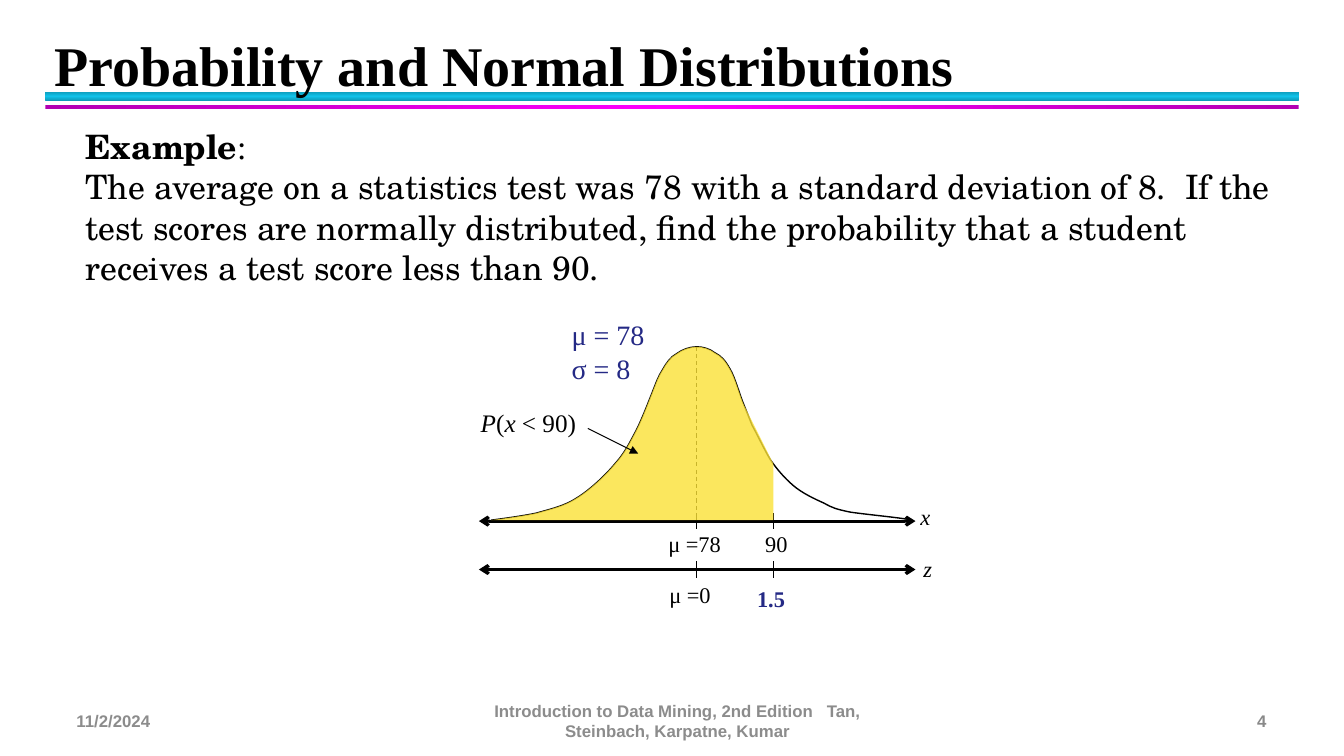
"""Build the slide on probability and normal distributions."""
from copy import deepcopy
from dataclasses import dataclass

from pptx import Presentation
from pptx import util as u
from pptx.dml.color import RGBColor
from pptx.enum import dml, shapes, text
from pptx.oxml.ns import qn
from pptx.oxml.xmlchemy import OxmlElement

PX = 9144


@dataclass(frozen=True)
class Theme:
    """Colours, fonts and type sizes of the slide."""
    black: str = "000000"
    white: str = "FFFFFF"
    navy: str = "242985"
    yellow: str = "FBE136"
    cyan: tuple = ("0E9BBA", "12C2E9", "0E9BBA")
    magenta: tuple = ("B200B2", "FF00FF", "B200B2")
    footer_grey: str = "8C8C8C"
    number_grey: str = "898989"
    serif: str = "Times New Roman"
    schoolbook: str = "TeX Gyre Schola"
    sans: str = "Arial"
    title: int = 40
    body: int = 24
    parameters: int = 20
    area: int = 18
    label: int = 16
    footer: int = 12


THEME = Theme()

BELL = [
    (-204, 1), (-196, 2), (-173, 5), (-159, 8),
    (-145, 12), (-131, 15), (-119, 23),
    (-106, 31), (-91, 45), (-81, 57),
    (-71, 68), (-66, 79), (-60, 90),
    (-54, 102), (-48, 118), (-44, 128),
    (-40, 138), (-38, 144), (-34, 150),
    (-30, 157), (-26, 163), (-20, 166),
    (-15, 170), (-7, 173), (0, 173),
    (6, 173), (13, 171), (18, 167),
    (24, 164), (28, 160), (33, 151),
    (38, 143), (43, 124), (47, 115),
    (51, 105), (51, 104), (55, 95),
    (60, 86), (67, 71), (73, 61),
    (80, 51), (87, 43), (95, 36),
    (104, 28), (117, 22), (126, 18),
    (135, 13), (138, 12), (152, 9),
    (165, 7), (196, 4), (208, 2),
]


def rgb(color):
    """Return a colour object for a hex string."""
    return RGBColor.from_string(color)


def emu(*lengths):
    """Turn px lengths into EMU."""
    return [length * PX for length in lengths]


def add_text(slide, box, lines, size, color=THEME.black, font=THEME.serif, bold=False,
             italic=False, align=text.PP_ALIGN.LEFT, anchor=text.MSO_ANCHOR.TOP, wrap=True):
    """Add a text box with one paragraph per line and return it."""
    shape = slide.shapes.add_textbox(*emu(*box))
    frame = shape.text_frame
    frame.text = "\n".join(lines)
    frame.word_wrap = wrap
    frame.vertical_anchor = anchor
    if not wrap:
        frame.auto_size = text.MSO_AUTO_SIZE.SHAPE_TO_FIT_TEXT
    for paragraph in frame.paragraphs:
        paragraph.alignment = align
        paragraph.font.name = font
        paragraph.font.size = u.Pt(size)
        paragraph.font.bold = bold
        paragraph.font.italic = italic
        paragraph.font.color.rgb = rgb(color)
    return shape


def add_line(slide, start, end, width=0.75, head=None, tail=None, dashed=False):
    """Add a straight black line with optional arrowheads."""
    connector = slide.shapes.add_connector(shapes.MSO_CONNECTOR.STRAIGHT, *emu(*start, *end))
    connector.line.color.rgb = rgb(THEME.black)
    connector.line.width = u.Pt(width)
    if dashed:
        connector.line.dash_style = dml.MSO_LINE.DASH
    for tag, kind in (("a:headEnd", head), ("a:tailEnd", tail)):
        if kind:
            arrowhead = OxmlElement(tag)
            arrowhead.set("type", kind)
            connector.get_or_add_ln().append(arrowhead)
    connector.element.spPr.append(OxmlElement("a:effectLst"))


def add_bar(slide, box, colors, angle):
    """Add a rule with a three-stop gradient."""
    bar = slide.shapes.add_shape(shapes.MSO_SHAPE.RECTANGLE, *emu(*box))
    bar.shadow.inherit = False
    bar.line.fill.background()
    bar.fill.gradient()
    bar.fill.gradient_angle = angle
    stop_list = bar.element.spPr.find(".//" + qn("a:gsLst"))
    stop_list.append(deepcopy(stop_list[-1]))
    for stop, color, position in zip(bar.fill.gradient_stops, colors, (0, 0.5, 1)):
        stop.color.rgb = rgb(color)
        stop.position = position


def add_curve(slide, origin, bends, corners=()):
    """Add cubic Bézier segments, closed through any straight corners given."""
    points = [emu(origin[0] + across, origin[1] - up) for across, up in [*bends, *corners]]
    builder = slide.shapes.build_freeform(*points[0], scale=1.0)
    builder.add_line_segments(points[1:], close=bool(corners))
    curve = builder.convert_to_shape()
    curve.shadow.inherit = False
    straights = list(curve.element.iter(qn("a:lnTo")))[:len(bends) - 1]
    for index in range(0, len(straights), 3):
        segment = OxmlElement("a:cubicBezTo")
        straights[index].addprevious(segment)
        for straight in straights[index:index + 3]:
            segment.append(straight[0])
            straight.getparent().remove(straight)
    return curve


def add_header(slide, box):
    """Place the two rules and the title over them."""
    left, top, width, height = box
    add_bar(slide, (left + 45, top + 63, 1243, 9), THEME.cyan, 90)
    add_bar(slide, (left + 45, top + 76, 1243, 4), THEME.magenta, 0)
    add_text(slide, (left, top, width, height), ["Probability and Normal Distributions"],
             THEME.title, bold=True, align=text.PP_ALIGN.CENTER, anchor=text.MSO_ANCHOR.MIDDLE)


def add_example(slide, box):
    """Place the worked example's question."""
    shape = add_text(slide, box, [
        "", "The average on a statistics test was 78 with a standard deviation of 8.  If the "
        "test scores are normally distributed, find the probability that a student receives "
        "a test score less than 90."], THEME.body, font=THEME.schoolbook)
    heading = shape.text_frame.paragraphs[0]
    for wording, font, bold in (("Example", THEME.schoolbook, True), (":", THEME.serif, False)):
        run = heading.add_run()
        run.text = wording
        run.font.name = font
        run.font.bold = bold


def add_distribution(slide, box):
    """Place the bell curve, its shaded area and the x and z axes."""
    left, top, width, height = box
    mean, score = left + 224, left + 300
    x_axis, z_axis = top + 207, top + 255

    for axis in (z_axis, x_axis):
        add_line(slide, (left + 8, axis), (left + 441, axis), 2.25, "arrow", "arrow")
        for tick in (mean, score):
            add_line(slide, (tick, axis - 8), (tick, axis + 8))

    outline = add_curve(slide, (mean, x_axis), BELL)
    outline.fill.background()
    outline.line.color.rgb = rgb(THEME.black)
    outline.line.width = u.Pt(1)
    add_line(slide, (mean, x_axis - 173), (mean, x_axis - 3), dashed=True)

    for wording, x, y, label_width, italic in (
            ("μ =0", 187, 262, 64, False), ("z", 439, 236, 31, True),
            ("90", 282, 211, 45, False), ("μ =78", 186, 211, 77, False),
            ("x", 436, 184, 32, True)):
        add_text(slide, (left + x, top + y, label_width, 37), [wording], THEME.label,
                 italic=italic, wrap=False)
    z_score = add_text(slide, (left + 274, top + 266, 51, 37), ["1.5"], THEME.label,
                       THEME.navy, bold=True, wrap=False)
    z_score.fill.solid()
    z_score.fill.fore_color.rgb = rgb(THEME.white)
    add_text(slide, (left + 90, top, 98, 77), ["μ = 78", "σ = 8"], THEME.parameters,
             THEME.navy, wrap=False)
    probability = add_text(slide, (left, top + 89, 124, 40), [""], THEME.area, wrap=False)
    for wording, italic in (("P", True), ("(", False), ("x", True), (" < 90)", False)):
        run = probability.text_frame.paragraphs[0].add_run()
        run.text = wording
        run.font.italic = italic

    left_part = BELL[:BELL.index((47, 115)) + 1]
    area = add_curve(slide, (mean, x_axis), left_part, [(76, 57), (76, 1)])
    area.line.fill.background()
    area.fill.solid()
    area.fill.fore_color.rgb = rgb(THEME.yellow)
    alpha = OxmlElement("a:alpha")
    alpha.set("val", "80000")
    area.element.spPr.find(qn("a:solidFill"))[0].append(alpha)
    add_line(slide, (left + 116, top + 115), (left + 166, top + 140), tail="triangle")


def add_footer(slide, box):
    """Place the date, the source and the slide number."""
    left, top, width, height = box
    for wording, x, part_width, align, color in (
            ("11/2/2024", 0, 311, text.PP_ALIGN.LEFT, THEME.footer_grey),
            ("Introduction to Data Mining, 2nd Edition   Tan, Steinbach, Karpatne, Kumar",
             378, 456, text.PP_ALIGN.CENTER, THEME.footer_grey),
            ("4", width - 311, 311, text.PP_ALIGN.RIGHT, THEME.number_grey)):
        add_text(slide, (left + x, top, part_width, height), [wording], THEME.footer, color,
                 THEME.sans, bold=True, align=align, anchor=text.MSO_ANCHOR.MIDDLE)


def main():
    """Build and save the presentation."""
    presentation = Presentation()
    presentation.slide_width, presentation.slide_height = emu(1333, 750)
    slide = presentation.slides.add_slide(presentation.slide_layouts[6])
    add_header(slide, (0, 28, 1000, 71))
    add_footer(slide, (66, 695, 1200, 40))
    add_example(slide, (75, 120, 1234, 172))
    add_distribution(slide, (467, 310, 470, 302))
    presentation.save("out.pptx")


if __name__ == "__main__":
    main()
